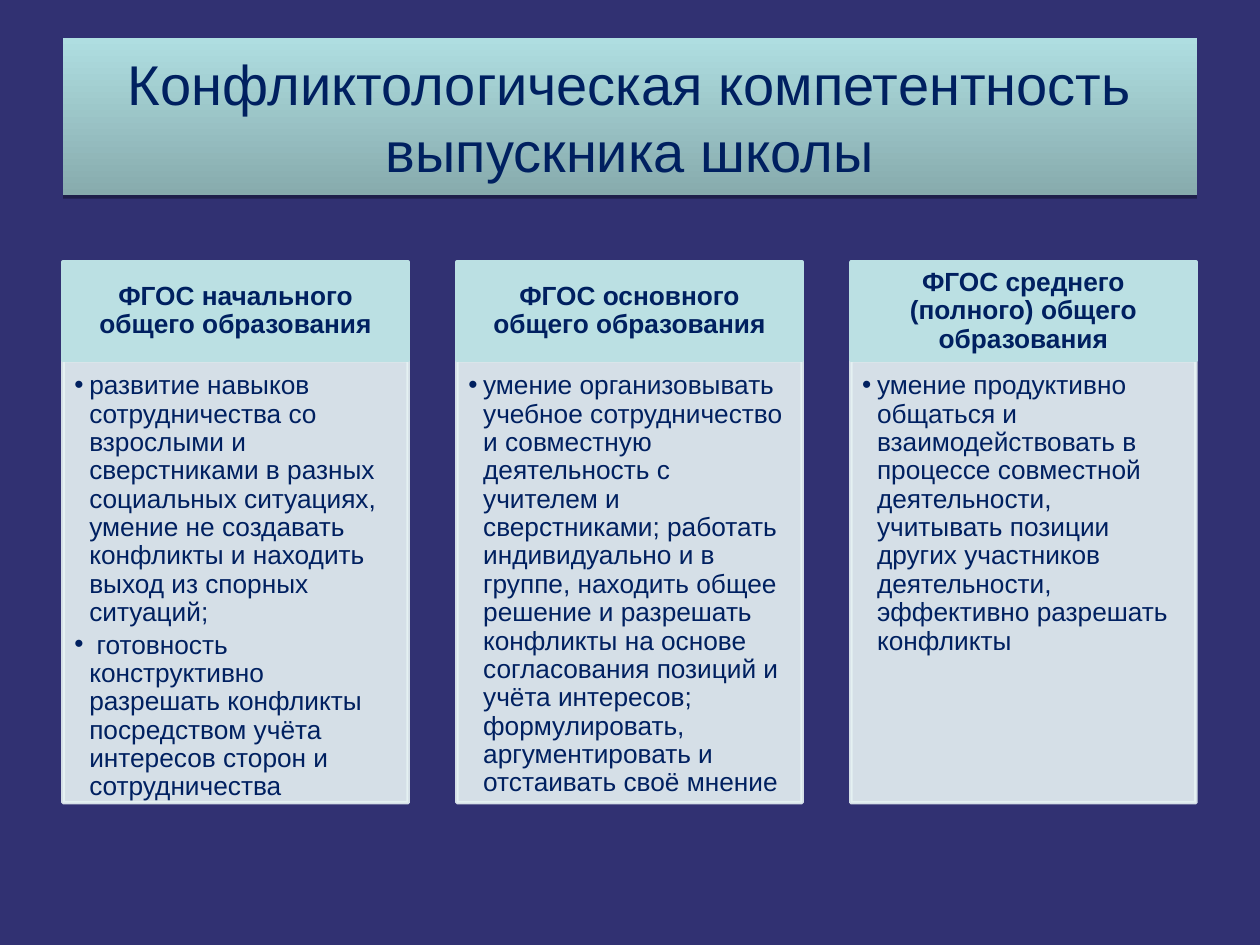
from lxml.etree import SubElement
from pptx import Presentation
from pptx.dml.color import RGBColor
from pptx.enum.shapes import MSO_SHAPE
from pptx.enum.text import MSO_ANCHOR, MSO_AUTO_SIZE, PP_ALIGN
from pptx.oxml import parse_xml
from pptx.oxml.ns import nsdecls, qn
from pptx.util import Cm, Pt

NIGHT = RGBColor(0x31, 0x31, 0x72)
NAVY = RGBColor(0x00, 0x20, 0x60)
TEAL = RGBColor(0x87, 0xAB, 0xAD)
AQUA = RGBColor(0xAF, 0xDE, 0xE1)
HEADING = RGBColor(0xBB, 0xE0, 0xE3)
PANEL = RGBColor(0xE7, 0xF3, 0xF4)

LEFT, COLUMN_WIDTH, COLUMN_STEP = 1.27, 6.96, 7.94
HEADING_TOP, HEADING_HEIGHT = 5.28, 1.99
LIST_TOP, LIST_HEIGHT = 7.27, 8.91

TITLE = "Конфликтологическая компетентность выпускника школы"
STANDARDS = [
    ("ФГОС начального общего образования", [
        "развитие навыков сотрудничества со взрослыми и сверстниками в разных "
        "социальных ситуациях, умение не создавать конфликты и находить выход "
        "из спорных ситуаций;",
        " готовность конструктивно разрешать конфликты посредством учёта "
        "интересов сторон и сотрудничества",
    ]),
    ("ФГОС основного общего образования", [
        "умение организовывать учебное сотрудничество и совместную деятельность "
        "с учителем и сверстниками; работать индивидуально и в группе, находить "
        "общее решение и разрешать конфликты на основе согласования позиций и "
        "учёта интересов; формулировать, аргументировать и отстаивать своё мнение",
    ]),
    ("ФГОС среднего (полного) общего образования", [
        "умение продуктивно общаться и взаимодействовать в процессе совместной "
        "деятельности, учитывать позиции других участников деятельности, "
        "эффективно разрешать конфликты",
    ]),
]

TITLE_FONT = {"name": "Arial", "size": Pt(32), "bold": False}
HEADING_FONT = {"name": "Arial", "size": Pt(15), "bold": True}
LIST_FONT = {"name": "Arial", "size": Pt(15), "bold": False}
CENTRED = {"alignment": PP_ALIGN.CENTER, "space_before": Pt(0)}
HEADING_PARAGRAPH = {**CENTRED, "line_spacing": 0.9}
LIST_PARAGRAPH = {"alignment": PP_ALIGN.LEFT, "line_spacing": 0.9,
                  "space_before": Pt(0), "space_after": Pt(2.25)}


def set_all(target, values):
    for name, value in values.items():
        setattr(target, name, value)


def frame_format(anchor, left, top, right, bottom):
    return {"word_wrap": True, "auto_size": MSO_AUTO_SIZE.NONE,
            "vertical_anchor": anchor,
            "margin_left": Cm(left), "margin_top": Cm(top),
            "margin_right": Cm(right), "margin_bottom": Cm(bottom)}


def place(shape, left, top, width, height):
    set_all(shape, {"left": Cm(left), "top": Cm(top),
                    "width": Cm(width), "height": Cm(height)})


def write(shape, texts, frame, paragraph_format, font):
    shape.text_frame.text = "\n".join(texts)
    set_all(shape.text_frame, frame)
    for paragraph in shape.text_frame.paragraphs:
        set_all(paragraph, paragraph_format)
        for run in paragraph.runs:
            set_all(run.font, font)
            run.font.color.rgb = NAVY


def paint(shape, color, opacity=100):
    shape.line.width = Pt(2)
    for fill in (shape.fill, shape.line.fill):
        fill.solid()
        fill.fore_color.rgb = color
    if opacity < 100:
        for tint in shape._element.spPr.iter(qn("a:srgbClr")):
            SubElement(tint, qn("a:alpha"), val=str(opacity * 1000))


def add_bullet(paragraph):
    properties = paragraph._p.get_or_add_pPr()
    properties.set("marL", str(Cm(0.3)))
    properties.set("indent", str(Cm(-0.3)))
    SubElement(properties, qn("a:buFont"), typeface="Arial")
    SubElement(properties, qn("a:buChar"), char="•")


def fill_title(title):
    place(title, LEFT, 0.76, 22.86, 3.18)
    write(title, [TITLE], frame_format(MSO_ANCHOR.MIDDLE, 0.25, 0.13, 0.25, 0.13),
          CENTRED, TITLE_FONT)
    title.fill.gradient()
    title.fill.gradient_angle = 90
    for stop, color in zip(title.fill.gradient_stops, (TEAL, AQUA)):
        stop.color.rgb = color
        stop.position = 0 if color == TEAL else 1
    title._element.spPr.append(parse_xml(
        f'<a:effectLst {nsdecls("a")}><a:outerShdw blurRad="0" dist="{Pt(1.8)}" '
        'dir="5400000" rotWithShape="0"><a:srgbClr val="000000">'
        '<a:alpha val="35000"/></a:srgbClr></a:outerShdw></a:effectLst>'))


def add_heading(slide, text, left):
    heading = slide.shapes.add_shape(
        MSO_SHAPE.RECTANGLE, Cm(left), Cm(HEADING_TOP),
        Cm(COLUMN_WIDTH), Cm(HEADING_HEIGHT))
    heading.shadow.inherit = False
    paint(heading, HEADING)
    write(heading, [text], frame_format(MSO_ANCHOR.MIDDLE, 0.3, 0.18, 0.3, 0.18),
          HEADING_PARAGRAPH, HEADING_FONT)


def fill_list(body, outcomes, left):
    place(body, left, LIST_TOP, COLUMN_WIDTH, LIST_HEIGHT)
    paint(body, PANEL, 90)
    write(body, outcomes, frame_format(MSO_ANCHOR.TOP, 0.23, 0.23, 0.3, 0.33),
          LIST_PARAGRAPH, LIST_FONT)
    for paragraph in body.text_frame.paragraphs:
        add_bullet(paragraph)


def main():
    deck = Presentation()
    set_all(deck, {"slide_width": Cm(25.4), "slide_height": Cm(19.05)})
    slide = deck.slides.add_slide(deck.slide_layouts.get_by_name("Comparison"))
    slide.background.fill.solid()
    slide.background.fill.fore_color.rgb = NIGHT

    title, *bodies, spare = slide.placeholders
    spare._element.getparent().remove(spare._element)
    fill_title(title)
    for column, (body, (heading, outcomes)) in enumerate(zip(bodies, STANDARDS)):
        left = LEFT + column * COLUMN_STEP
        add_heading(slide, heading, left)
        fill_list(body, outcomes, left)
    deck.save("out.pptx")


if __name__ == "__main__":
    main()
